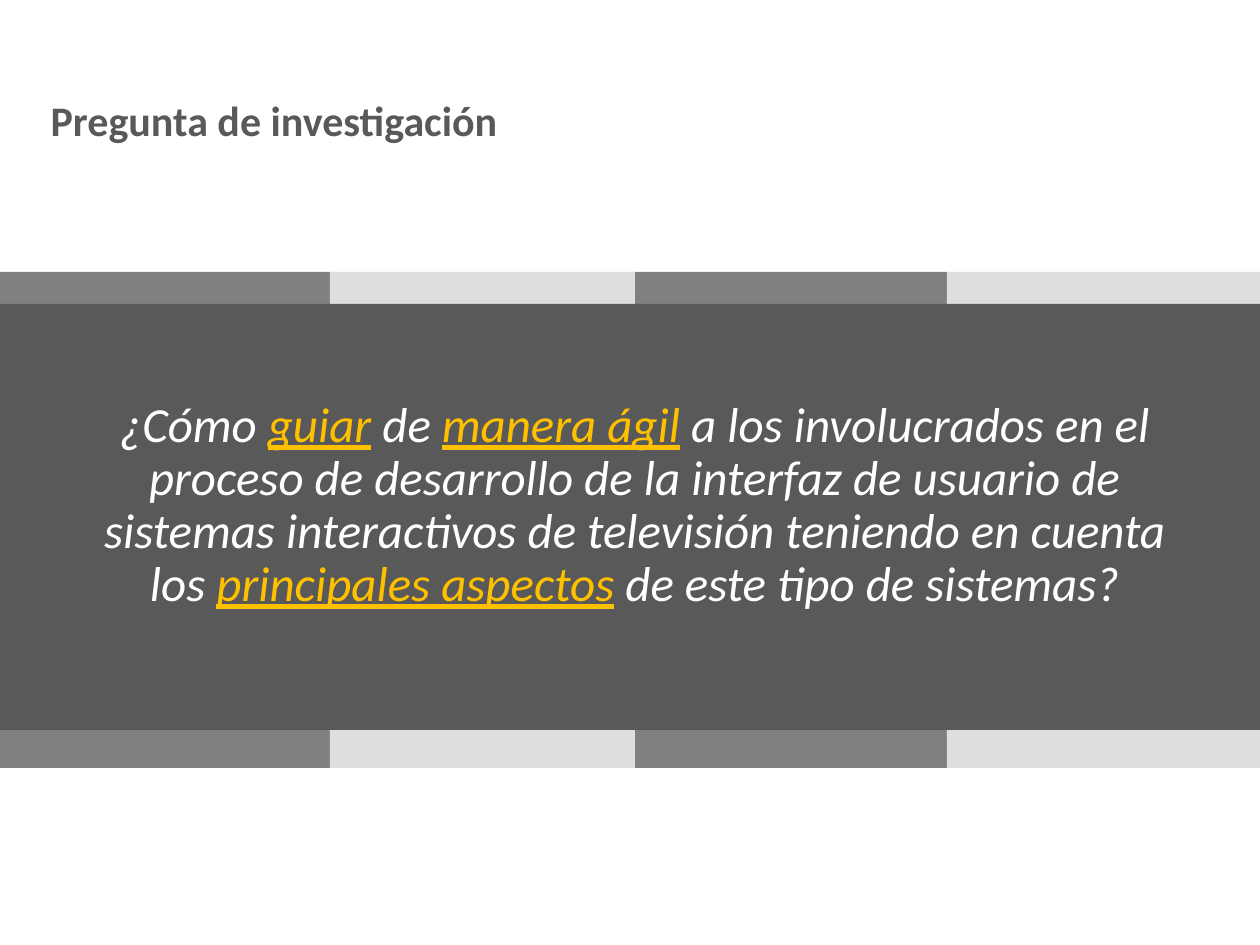
"""Build the research question slide with its banded grey panel."""
from pptx import Presentation
from pptx.dml.color import RGBColor
from pptx.enum.shapes import MSO_SHAPE
from pptx.enum.text import MSO_ANCHOR, PP_ALIGN
from pptx.util import Emu, Pt

PX = 914400 // 126
WHITE = RGBColor(0xFF, 0xFF, 0xFF)
LIGHT = RGBColor(0xDE, 0xDE, 0xDE)
MEDIUM = RGBColor(0x80, 0x80, 0x80)
DARK = RGBColor(0x59, 0x59, 0x59)
GOLD = RGBColor(0xFF, 0xC0, 0x00)


def place(shape, left, top, width, height):
    shape.left, shape.top = Emu(left * PX), Emu(top * PX)
    shape.width, shape.height = Emu(width * PX), Emu(height * PX)


def add_run(para, text, size, color):
    span = para.add_run()
    span.text = text
    span.font.name = "Calibri"
    span.font.size = Pt(size)
    span.font.color.rgb = color
    return span


deck = Presentation()
deck.slide_width, deck.slide_height = Emu(1260 * PX), Emu(945 * PX)
page = deck.slides.add_slide(deck.slide_layouts[5])

panels = [
    (0, 272, 330, 496, MEDIUM),
    (330, 272, 305, 496, LIGHT),
    (635, 272, 312, 496, MEDIUM),
    (947, 272, 313, 496, LIGHT),
    (0, 304, 1260, 426, DARK),
]
for left, top, width, height, color in panels:
    panel = page.shapes.add_shape(MSO_SHAPE.RECTANGLE, 0, 0, 0, 0)
    place(panel, left, top, width, height)
    panel.shadow.inherit = False
    panel.fill.solid()
    panel.fill.fore_color.rgb = color
    panel.line.fill.background()

title = page.shapes.title
place(title, 38, 94, 1128, 91)
title.text_frame.vertical_anchor = MSO_ANCHOR.TOP
para = title.text_frame.paragraphs[0]
para.alignment = PP_ALIGN.LEFT
para.line_spacing = 0.9
add_run(para, "Pregunta de investigación", 24, DARK).font.bold = True

box = page.shapes.add_textbox(0, 0, 0, 0)
place(box, 84, 394, 1101, 227)
box.text_frame.word_wrap = True
para = box.text_frame.paragraphs[0]
para.alignment = PP_ALIGN.CENTER
para.line_spacing = 0.9
question = [
    ("¿Cómo ", False),
    ("guiar", True),
    (" de ", False),
    ("manera ágil", True),
    (" a los involucrados en el proceso de desarrollo de la interfaz de usuario "
     "de sistemas interactivos de televisión teniendo en cuenta los ", False),
    ("principales aspectos", True),
    (" de este tipo de sistemas?", False),
]
for text, stressed in question:
    span = add_run(para, text, 28, GOLD if stressed else WHITE)
    span.font.italic = True
    span.font.underline = stressed

deck.save("out.pptx")
